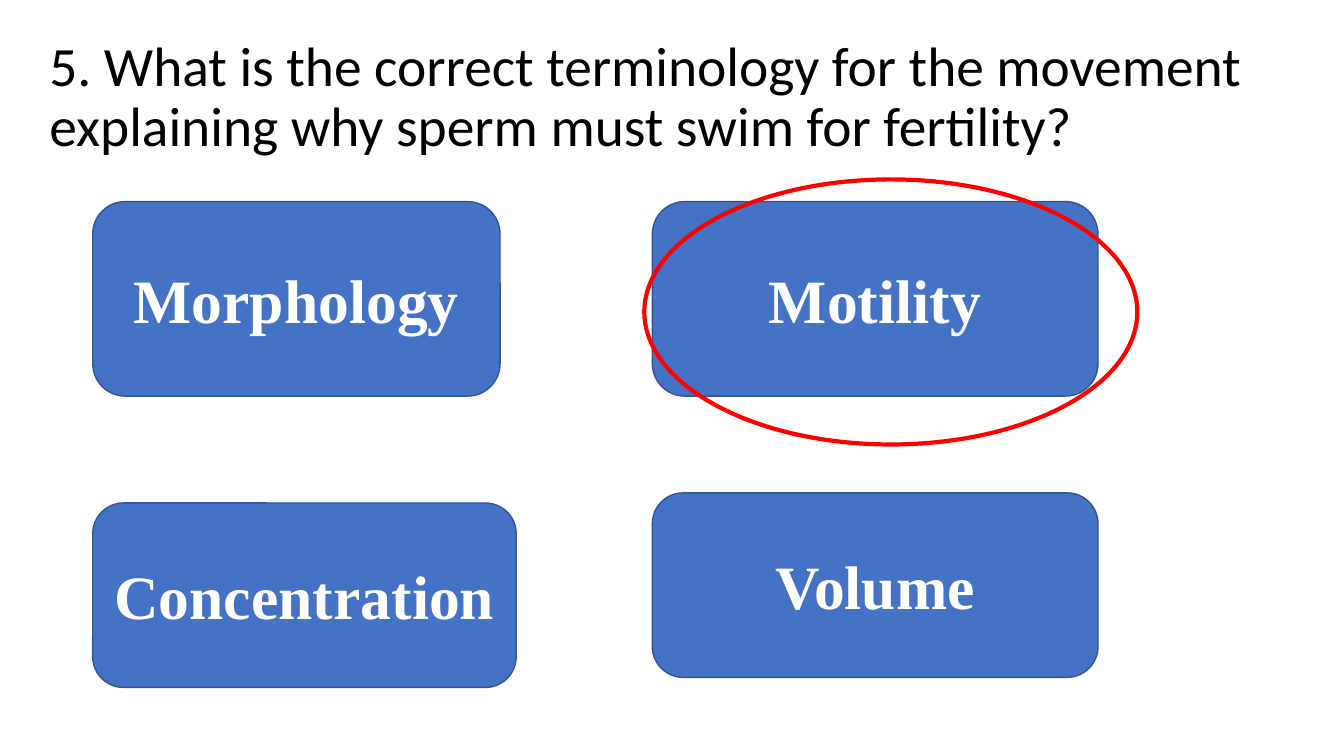
from pptx import Presentation
from pptx.dml.color import RGBColor
from pptx.enum import shapes as kinds, text as txt
from pptx.util import Inches, Pt

BLACK = RGBColor(0x00, 0x00, 0x00)
WHITE = RGBColor(0xFF, 0xFF, 0xFF)
BLUE = RGBColor(0x44, 0x72, 0xC4)
NAVY = RGBColor(0x32, 0x54, 0x91)
RED = RGBColor(0xFF, 0x00, 0x00)

QUESTION = ("5. What is the correct terminology for the movement "
            "explaining why sperm must swim for fertility?")
HEAD = (0.39, 0.25, 12.17, 1.45)
LEFT, RIGHT = 0.92, 6.47
TOP, TALL, LOW = 2, 1.93, 1.83
ANSWERS = [
    ("Motility", (RIGHT, TOP, 4.42, TALL)),
    ("Concentration", (LEFT, 4.99, 4.2, LOW)),
    ("Volume", (RIGHT, 4.89, 4.42, LOW)),
    ("Morphology", (LEFT, TOP, 4.04, TALL)),
]
RING = (6.39, 1.78, 4.89, 2.63)

ASK = {"name": "Calibri", "size": Pt(39.6), "bold": False}
REPLY = {"name": "Times New Roman", "size": Pt(44), "bold": True}


def write(shape, words, look, color, align):
    frame = shape.text_frame
    frame.word_wrap = True
    frame.vertical_anchor = txt.MSO_ANCHOR.MIDDLE
    para = frame.paragraphs[0]
    para.alignment = align
    run = para.add_run()
    run.text = words
    for key, value in look.items():
        setattr(run.font, key, value)
    run.font.color.rgb = color
    return para


def draw(slide, kind, box, fill, line, width):
    shape = slide.shapes.add_shape(kind, *map(Inches, box))
    shape.shadow.inherit = False
    if fill is None:
        shape.fill.background()
    else:
        shape.fill.solid()
        shape.fill.fore_color.rgb = fill
    shape.line.color.rgb = line
    shape.line.width = Pt(width)
    return shape


def main():
    deck = Presentation()
    deck.slide_width, deck.slide_height = Inches(13.33), Inches(7.5)
    slide = deck.slides.add_slide(deck.slide_layouts[5])
    title = slide.shapes.title
    for key, value in zip(("left", "top", "width", "height"), HEAD):
        setattr(title, key, Inches(value))
    title.text_frame.auto_size = txt.MSO_AUTO_SIZE.NONE
    para = write(title, QUESTION, ASK, BLACK, txt.PP_ALIGN.LEFT)
    para.line_spacing = 0.9

    for word, box in ANSWERS:
        card = draw(slide, kinds.MSO_SHAPE.ROUNDED_RECTANGLE, box, BLUE, NAVY, 1)
        write(card, word, REPLY, WHITE, txt.PP_ALIGN.CENTER)
    draw(slide, kinds.MSO_SHAPE.OVAL, RING, None, RED, 3)
    deck.save("out.pptx")


if __name__ == "__main__":
    main()
